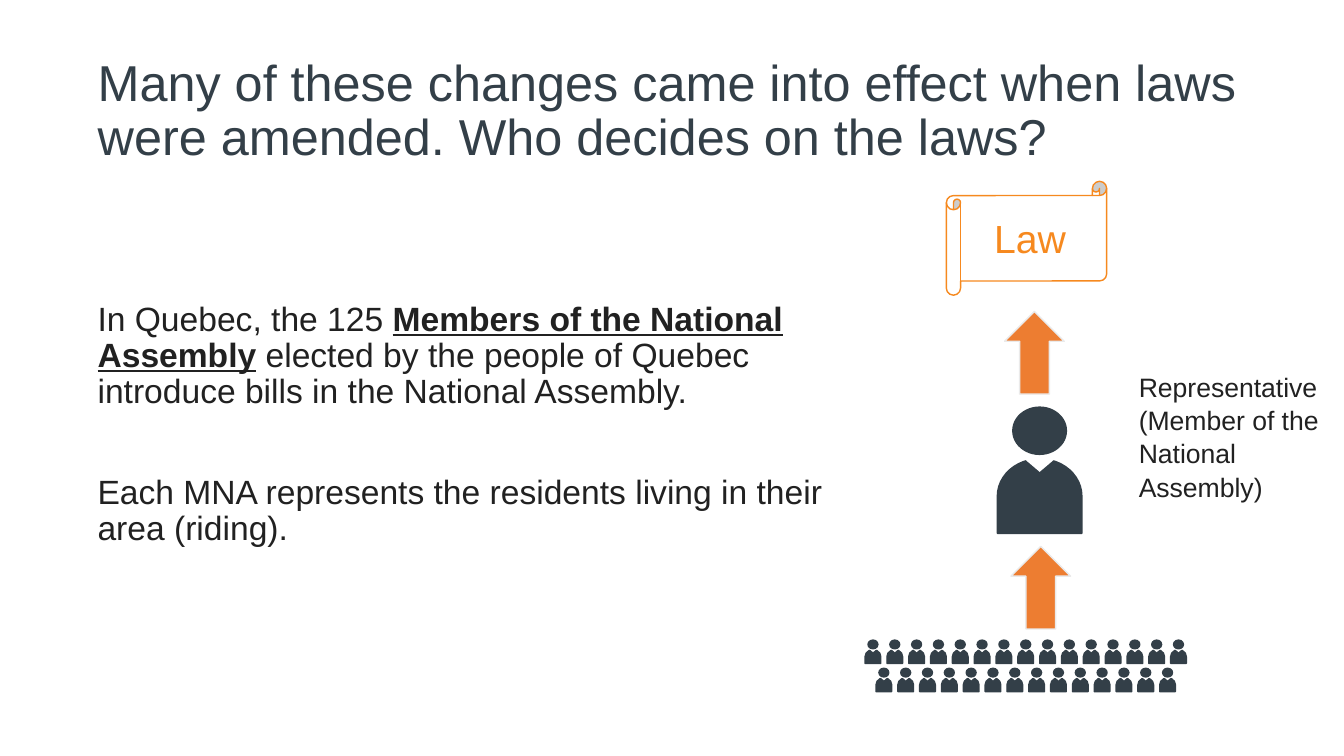
from pptx import Presentation
from pptx.dml.color import RGBColor
from pptx.enum.shapes import MSO_SHAPE
from pptx.enum.text import MSO_ANCHOR, PP_ALIGN
from pptx.util import Cm, Pt

DARK = RGBColor(0x33, 0x3F, 0x48)
TEXT = RGBColor(0x21, 0x21, 0x21)
WHITE = RGBColor(0xFF, 0xFF, 0xFF)
ORANGE = RGBColor(0xED, 0x7D, 0x31)
LAW_ORANGE = RGBColor(0xF6, 0x89, 0x1F)
PALE = RGBColor(0xEA, 0xEA, 0xEA)

UP_ARROW, SCROLL = MSO_SHAPE.UP_ARROW, MSO_SHAPE.HORIZONTAL_SCROLL
DELAY, OVAL = MSO_SHAPE.FLOWCHART_DELAY, MSO_SHAPE.OVAL
TRIANGLE = MSO_SHAPE.ISOSCELES_TRIANGLE
TOP, MIDDLE = MSO_ANCHOR.TOP, MSO_ANCHOR.MIDDLE
LEFT, CENTER = PP_ALIGN.LEFT, PP_ALIGN.CENTER

CROWD_SCALE = 0.185
CROWD_LEFT, CROWD_TOP = 22.0, 16.13
CROWD_PITCH, ROW_PITCH = 0.55, 0.71
CROWD_ROWS = (15, 14)


def write(tf, paragraphs, size, color, align=LEFT, anchor=TOP, spacing=1.0,
          gap=0, margin=None):
    """Fill a text frame; each paragraph is a list of (text, emphasised)."""
    tf.word_wrap = True
    tf.vertical_anchor = anchor
    if margin is not None:
        tf.margin_left = tf.margin_top = tf.margin_right = tf.margin_bottom = margin
    for i, runs in enumerate(paragraphs):
        p = tf.add_paragraph() if i else tf.paragraphs[0]
        p.alignment = align
        p.line_spacing = spacing
        p.space_before = Pt(gap if i else 0)
        for text, emphasised in runs:
            r = p.add_run()
            r.text = text
            r.font.name = "Arial"
            r.font.size = Pt(size)
            r.font.color.rgb = color
            r.font.bold = r.font.underline = emphasised


def add_shape(shapes, kind, x, y, w, h, fill, line=None, rotation=0):
    sp = shapes.add_shape(kind, Cm(x), Cm(y), Cm(w), Cm(h))
    sp.shadow.inherit = False
    sp.rotation = rotation
    sp.fill.solid()
    sp.fill.fore_color.rgb = fill
    if line is None:
        sp.line.fill.background()
    else:
        sp.line.color.rgb = line
        sp.line.width = Pt(1)
    return sp


def add_person(shapes, center, top, scale=1.0):
    """Draw torso, collar and head around a vertical centre line."""
    parts = (
        (DELAY, 1.3 + (1.88 - 2.13) / 2, 1.88, 2.13, DARK, DARK, 270),
        (TRIANGLE, 0.79, 1.98, 0.84, WHITE, None, 180),
        (OVAL, 0, 1.35, 1.19, DARK, DARK, 0),
    )
    for kind, dy, w, h, fill, line, rotation in parts:
        add_shape(shapes, kind, center - w * scale / 2, top + dy * scale,
                  w * scale, h * scale, fill, line, rotation)


def add_crowd(s):
    crowd = s.shapes.add_group_shape()
    for row, count in enumerate(CROWD_ROWS):
        for i in range(count):
            add_person(crowd.shapes, CROWD_LEFT + (i + row / 2) * CROWD_PITCH,
                       CROWD_TOP + row * ROW_PITCH, CROWD_SCALE)


def add_text(s, x, y, w, h, paragraphs, **fmt):
    tb = s.shapes.add_textbox(Cm(x), Cm(y), Cm(w), Cm(h))
    write(tb.text_frame, paragraphs, **fmt)


def add_title(s, text):
    title = s.shapes.title
    title.left, title.top = Cm(2.46), Cm(1.45)
    title.width, title.height = Cm(28.96), Cm(2.54)
    write(title.text_frame, [[(text, False)]], 36, DARK, spacing=0.9, margin=0)


def main():
    prs = Presentation()
    prs.slide_width, prs.slide_height = Cm(33.87), Cm(19.05)
    s = prs.slides.add_slide(prs.slide_layouts[5])

    add_title(s, "Many of these changes came into effect when laws were amended. "
                 "Who decides on the laws?")
    add_text(s, 2.46, 7.62, 19.96, 7.98, [
        [("In Quebec, the 125 ", False),
         ("Members of the National Assembly", True),
         (" elected by the people of Quebec introduce bills in the "
          "National Assembly.", False)],
        [("Each MNA represents the residents living in their area (riding).", False)],
    ], size=24, color=TEXT, spacing=0.9, gap=46, margin=0)

    add_crowd(s)
    add_shape(s.shapes, UP_ARROW, 25.48, 13.77, 1.5, 2.08, ORANGE, PALE)
    representative = s.shapes.add_group_shape()
    add_person(representative.shapes, 26.2, 10.26)
    add_shape(s.shapes, UP_ARROW, 25.32, 7.85, 1.5, 2.08, ORANGE, PALE)
    add_text(s, 28.45, 9.17, 5.05, 3.51, [
        [("Representative", False)],
        [("(Member of the National Assembly)", False)],
    ], size=19, color=TEXT, spacing=1.05)
    law = add_shape(s.shapes, SCROLL, 23.85, 4.57, 4.04, 2.87, WHITE, LAW_ORANGE)
    write(law.text_frame, [[("Law", False)]], 28, LAW_ORANGE, CENTER, MIDDLE)

    prs.save("out.pptx")


if __name__ == "__main__":
    main()
